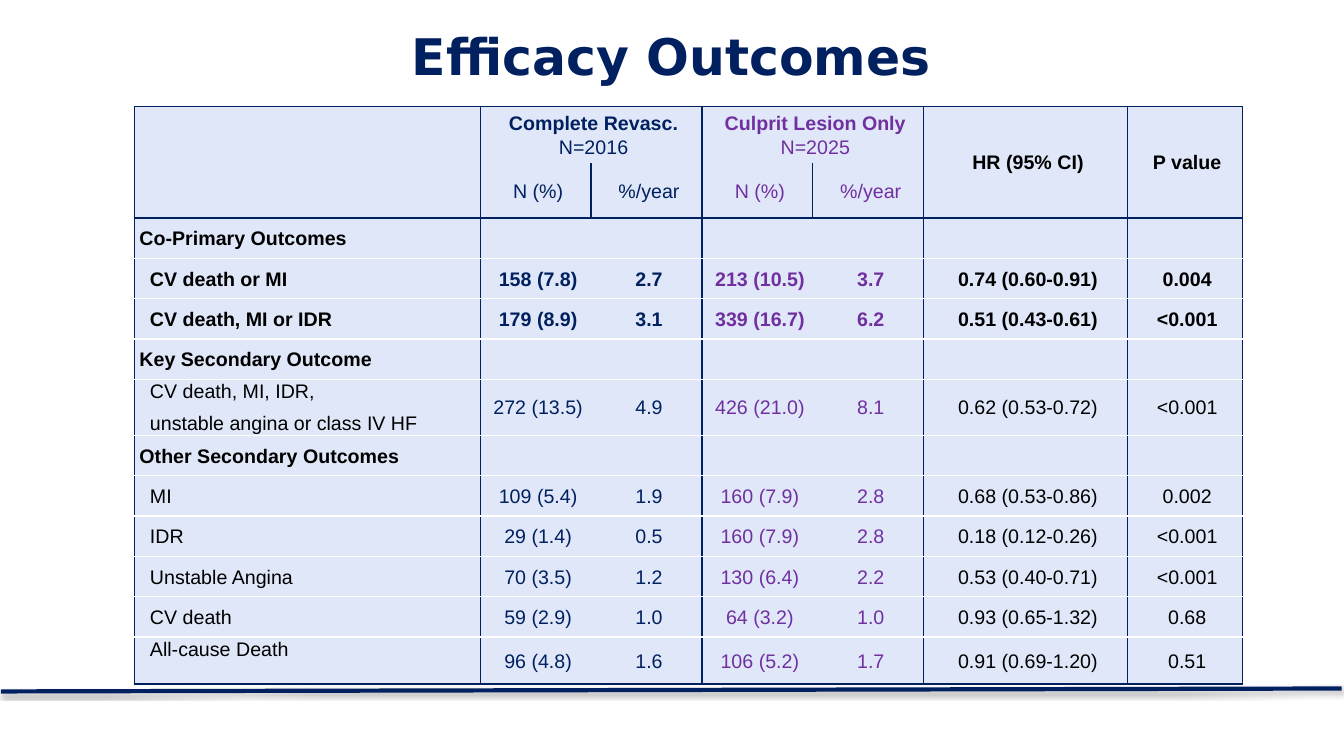
from lxml import etree
from pptx import Presentation
from pptx.dml import color
from pptx.enum import shapes, text
from pptx.oxml import ns, parse_xml
from pptx.util import Pt

COLORS = {"navy": "002060", "purple": "7030A0", "black": "000000",
          "white": "FFFFFF", "cell": "E0E7F8"}
COLUMN_COLORS = ["black", "navy", "navy", "purple", "purple", "black", "black"]
COLUMN_WIDTHS = [247, 79.2, 79.2, 79.2, 79.2, 145.4, 82.1]
ROW_HEIGHTS = [40.3, 39.3] + [28.8] * 4 + [40] + [28.8] * 5 + [33.6]

# Header texts: (row, column, bold line, plain line)
HEADERS = [
    (0, 1, "Complete Revasc.", "N=2016"), (0, 3, "Culprit Lesion Only", "N=2025"),
    (0, 5, "HR (95% CI)", ""), (0, 6, "P value", ""),
    (1, 1, "", "N (%)"), (1, 2, "", "%/year"),
    (1, 3, "", "N (%)"), (1, 4, "", "%/year"),
]
# Outcomes: bold flag, then the cells; a section title stands alone
OUTCOMES = [
    (True, "Co-Primary Outcomes"),
    (True, "CV death or MI", "158 (7.8)", "2.7", "213 (10.5)", "3.7", "0.74 (0.60-0.91)", "0.004"),
    (True, "CV death, MI or IDR", "179 (8.9)", "3.1", "339 (16.7)", "6.2", "0.51 (0.43-0.61)", "<0.001"),
    (True, "Key Secondary Outcome"),
    (False, "CV death, MI, IDR,\nunstable angina or class IV HF", "272 (13.5)", "4.9", "426 (21.0)",
     "8.1", "0.62 (0.53-0.72)", "<0.001"),
    (True, "Other Secondary Outcomes"),
    (False, "MI", "109 (5.4)", "1.9", "160 (7.9)", "2.8", "0.68 (0.53-0.86)", "0.002"),
    (False, "IDR", "29 (1.4)", "0.5", "160 (7.9)", "2.8", "0.18 (0.12-0.26)", "<0.001"),
    (False, "Unstable Angina", "70 (3.5)", "1.2", "130 (6.4)", "2.2", "0.53 (0.40-0.71)", "<0.001"),
    (False, "CV death", "59 (2.9)", "1.0", "64 (3.2)", "1.0", "0.93 (0.65-1.32)", "0.68"),
    (False, "All-cause Death", "96 (4.8)", "1.6", "106 (5.2)", "1.7", "0.91 (0.69-1.20)", "0.51"),
]


def rgb(name):
    return color.RGBColor.from_string(COLORS[name])


def add_run(paragraph, words, size, font, color_name, bold):
    run = paragraph.add_run()
    run.text = words
    run.font.size = Pt(size)
    run.font.name = font
    run.font.bold = bold
    run.font.color.rgb = rgb(color_name)


def set_border(cell, side, color_name):
    props = cell._tc.get_or_add_tcPr()
    line = etree.SubElement(props, ns.qn("a:ln" + side), w=str(Pt(1)))
    if color_name is None:
        etree.SubElement(line, ns.qn("a:noFill"))
    else:
        fill = etree.SubElement(line, ns.qn("a:solidFill"))
        etree.SubElement(fill, ns.qn("a:srgbClr"), val=COLORS[color_name])


def style_cell(cell, row, column):
    last = len(ROW_HEIGHTS) - 1
    header_edge = "navy" if column in (0, 5, 6) else None
    left = None if column in (2, 4) and row > 1 else "navy"
    right = None if column in (1, 3) and row > 1 else "navy"
    top = {0: "navy", 1: header_edge, 2: "navy"}.get(row, "white")
    bottom = {0: header_edge, 1: "navy", last: "navy"}.get(row, "white")
    for side, name in zip("LRTB", (left, right, top, bottom)):
        set_border(cell, side, name)
    cell.fill.solid()
    cell.fill.fore_color.rgb = rgb("cell")
    cell.margin_left = Pt(3.6)
    cell.margin_right = cell.margin_top = cell.margin_bottom = 0
    cell.vertical_anchor = text.MSO_ANCHOR.MIDDLE


def new_line(paragraph, centred):
    paragraph.line_spacing = 1.07
    if centred:
        paragraph.alignment = text.PP_ALIGN.CENTER


def draw_title(slide, left, top, width, height):
    frame = slide.shapes.add_textbox(Pt(left), Pt(top), Pt(width), Pt(height)).text_frame
    frame.word_wrap = True
    frame.margin_left = frame.margin_right = frame.margin_top = frame.margin_bottom = 0
    heading = frame.paragraphs[0]
    heading.alignment = text.PP_ALIGN.CENTER
    add_run(heading, "Efficacy Outcomes", 36, "DejaVu Sans", "navy", True)


def draw_outcomes(slide, left, top):
    frame = slide.shapes.add_table(len(ROW_HEIGHTS), len(COLUMN_WIDTHS), Pt(left), Pt(top),
                                   Pt(sum(COLUMN_WIDTHS)), Pt(sum(ROW_HEIGHTS)))
    outcomes = frame.table
    outcomes.first_row = outcomes.horz_banding = False
    for column, width in zip(outcomes.columns, COLUMN_WIDTHS):
        column.width = Pt(width)
    for row, height in enumerate(ROW_HEIGHTS):
        outcomes.rows[row].height = Pt(height)
        for column in range(len(COLUMN_WIDTHS)):
            style_cell(outcomes.cell(row, column), row, column)

    # Header
    for column in (0, 5, 6):
        outcomes.cell(0, column).merge(outcomes.cell(1, column))
    for column in (1, 3):
        outcomes.cell(0, column).merge(outcomes.cell(0, column + 1))
    for row, column, strong, plain in HEADERS:
        label = outcomes.cell(row, column).text_frame.paragraphs[0]
        new_line(label, True)
        if strong:
            add_run(label, strong, 14, "Arial", COLUMN_COLORS[column], True)
        if strong and plain:
            label.add_line_break()
        if plain:
            add_run(label, plain, 14, "Arial", COLUMN_COLORS[column], False)

    # Outcome rows
    for row, (bold, *values) in enumerate(OUTCOMES, 2):
        for column, value in enumerate(values):
            body = outcomes.cell(row, column).text_frame
            for index, words in enumerate(value.split("\n")):
                line = body.add_paragraph() if index else body.paragraphs[0]
                new_line(line, column > 0)
                if index:
                    line.space_before = Pt(6)
                if column == 0 and len(values) > 1:
                    line._p.get_or_add_pPr().set("marL", str(Pt(7.5)))
                add_run(line, words, 14, "Arial", COLUMN_COLORS[column], bold)
    outcomes.cell(len(ROW_HEIGHTS) - 1, 0).vertical_anchor = text.MSO_ANCHOR.TOP


def draw_footer_rule(slide, left, top, width, height):
    rule = slide.shapes.add_connector(shapes.MSO_CONNECTOR.STRAIGHT, Pt(left), Pt(top + height),
                                      Pt(left + width), Pt(top))
    rule.line.color.rgb = rgb("navy")
    rule.line.width = Pt(3)
    rule._element.spPr.append(parse_xml(
        f'<a:effectLst {ns.nsdecls("a")}><a:outerShdw blurRad="{Pt(3.1)}" dist="{Pt(1.8)}" '
        f'dir="5400000" rotWithShape="0"><a:srgbClr val="{COLORS["black"]}">'
        '<a:alpha val="35000"/></a:srgbClr></a:outerShdw></a:effectLst>'))


def main():
    deck = Presentation()
    deck.slide_width, deck.slide_height = Pt(960), Pt(540)
    slide = deck.slides.add_slide(deck.slide_layouts[6])
    draw_footer_rule(slide, 0.7, 491.8, 957.6, 2.1)
    draw_outcomes(slide, 96, 76.2)
    draw_title(slide, 94.3, 18, 770.4, 36)
    deck.save("out.pptx")


if __name__ == "__main__":
    main()
